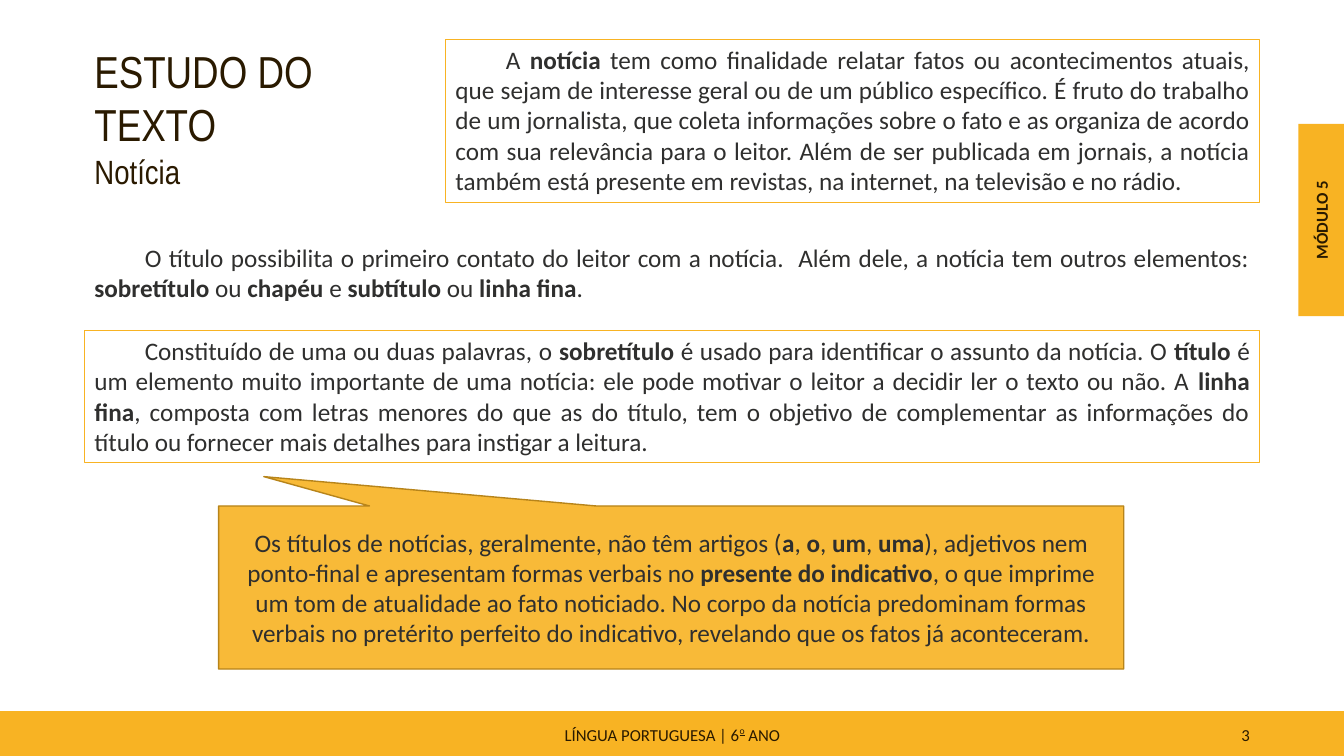
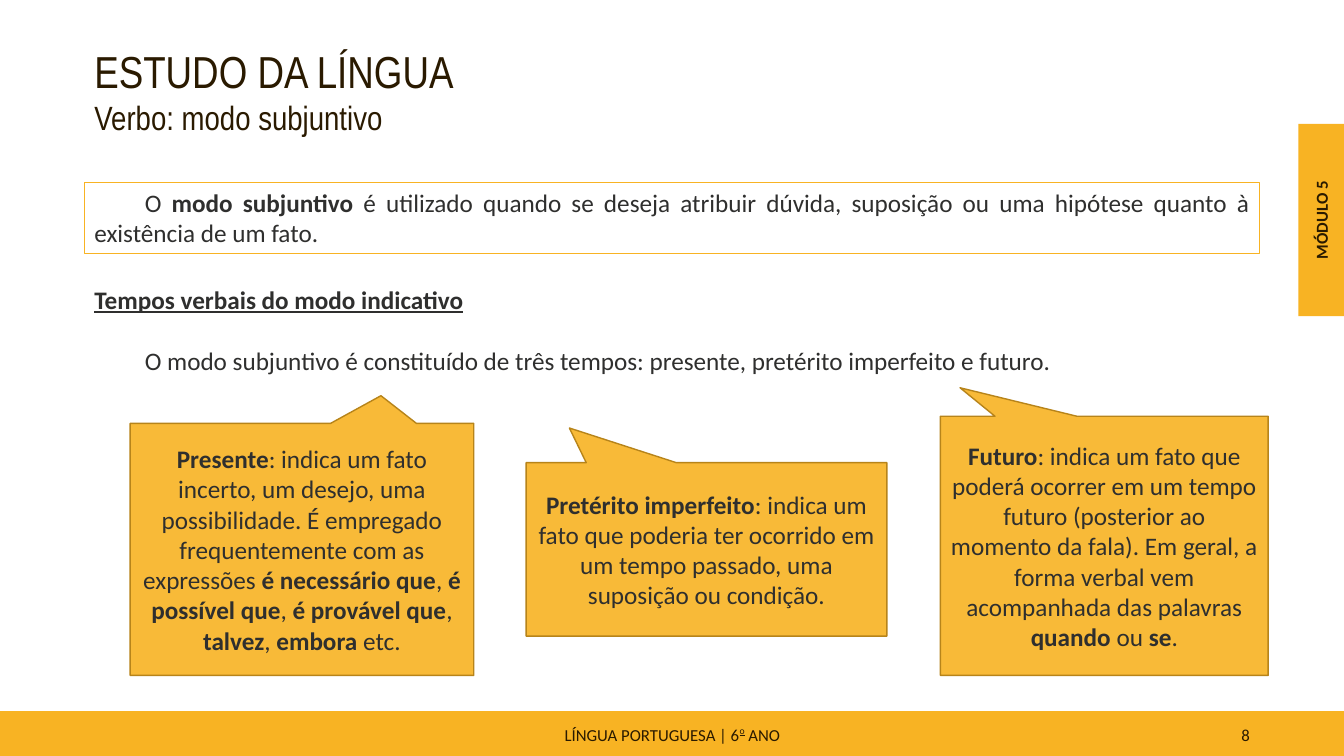
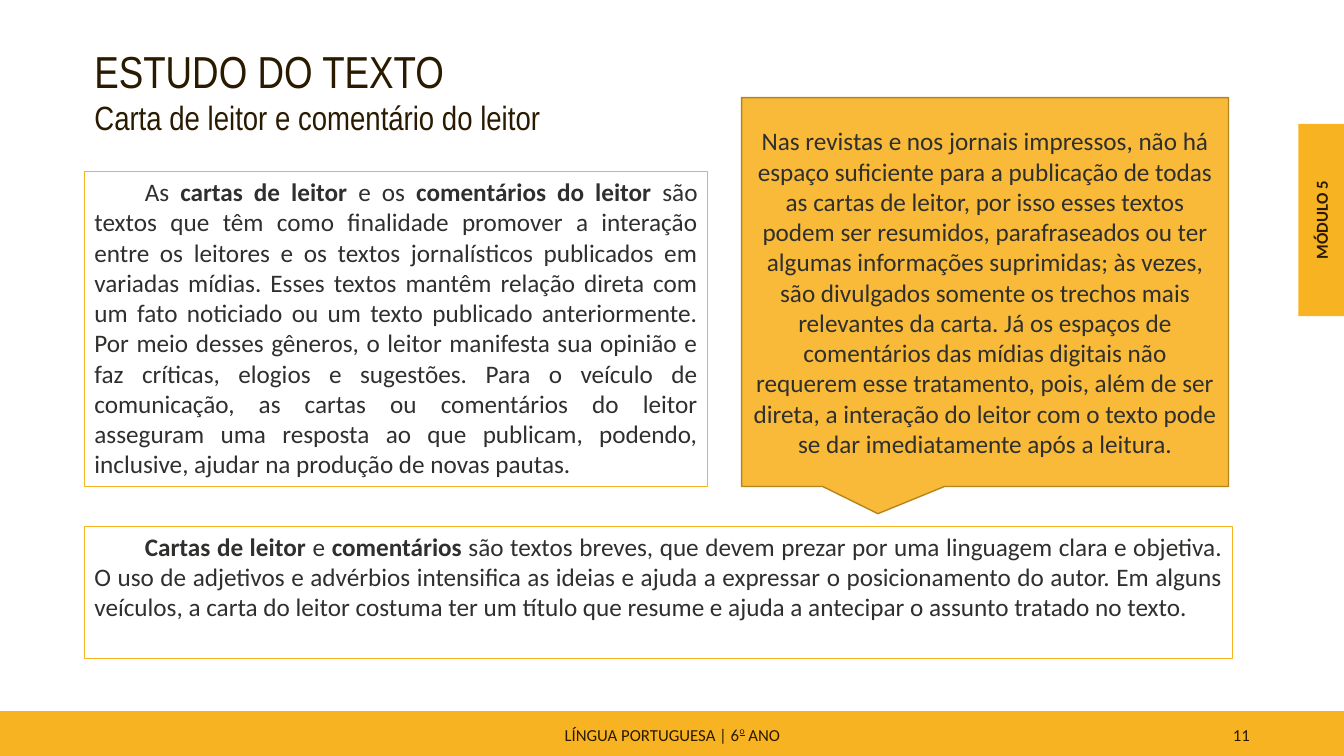
from dataclasses import dataclass
from typing import Any

import lxml.etree
import pptx
import pptx.dml.color
import pptx.enum.shapes
import pptx.enum.text
import pptx.oxml.ns
import pptx.util

Cm = pptx.util.Cm
Pt = pptx.util.Pt
ALIGN = pptx.enum.text.PP_ALIGN
ANCHOR = pptx.enum.text.MSO_ANCHOR
SHAPE = pptx.enum.shapes.MSO_SHAPE

PAGE_WIDTH, PAGE_HEIGHT = 33.87, 19.05
LEFT, CONTENT_WIDTH = 2.13, 29.62
YELLOW, OCHRE, BROWN, GREY = "F8B323", "B7841A", "2A1A00", "2F2F2E"
FIRST_LINE = 1.27


def colour(value: str) -> pptx.dml.color.RGBColor:
    return pptx.dml.color.RGBColor.from_string(value)


def text_format(size: int, value: str, name: str = "Calibri", **more: Any) -> dict[str, Any]:
    return {"name": name, "size": Pt(size), "colour": value, **more}


TITLE = text_format(32, BROWN, "Arial Narrow")
SUBTITLE = text_format(24, BROWN, "Arial Narrow")
BODY = text_format(18, GREY)
HEADING = text_format(18, GREY, bold=True, underline=True)
FOOTER = text_format(12, BROWN)
ORDINAL = text_format(12, BROWN, underline=True)
MODULE = text_format(12, BROWN, bold=True)


@dataclass(frozen=True)
class Frame:
    """Place and size in centimetres."""
    left: float
    top: float
    width: float
    height: float

    def lengths(self) -> list[pptx.util.Length]:
        return [Cm(side) for side in (self.left, self.top, self.width, self.height)]


@dataclass(frozen=True)
class TextBlock:
    """Justified text; ** switches bold on and off."""
    frame: Frame
    text: str
    outlined: bool = True
    heading: str = ""


@dataclass(frozen=True)
class Callout:
    """Balloon whose tip is given as a share of its size from its centre."""
    frame: Frame
    tip: tuple[float, float]
    text: str


@dataclass(frozen=True)
class Lesson:
    number: int
    title: str
    subtitle: str
    title_width: float
    blocks: tuple[TextBlock, ...]
    callouts: tuple[Callout, ...]


BAR = Frame(0, 17.92, PAGE_WIDTH, 1.13)
TAB = Frame(32.72, 3.12, 1.15, 4.85)
TAB_TEXT_HEIGHT = 0.76
TAB_TEXT = Frame(
    TAB.left + (TAB.width - TAB.height) / 2,
    TAB.top + (TAB.height - TAB_TEXT_HEIGHT) / 2,
    TAB.height,
    TAB_TEXT_HEIGHT,
)
FOOTER_TEXT = Frame(11.23, 18.03, 11.43, 0.97)
PAGE_NUMBER = Frame(23.93, 18.03, 7.82, 0.97)

LESSONS = (
    Lesson(
        3, "ESTUDO DO TEXTO", "Notícia", 9.09,
        (
            TextBlock(
                Frame(11.23, 0.99, 20.52, 4.11),
                "A **notícia** tem como finalidade relatar fatos ou acontecimentos atuais, "
                "que sejam de interesse geral ou de um público específico. É fruto do "
                "trabalho de um jornalista, que coleta informações sobre o fato e as "
                "organiza de acordo com sua relevância para o leitor. Além de ser publicada "
                "em jornais, a notícia também está presente em revistas, na internet, na "
                "televisão e no rádio.",
            ),
            TextBlock(
                Frame(LEFT, 5.97, CONTENT_WIDTH, 1.8),
                "O título possibilita o primeiro contato do leitor com a notícia.  Além "
                "dele, a notícia tem outros elementos: **sobretítulo** ou **chapéu** e "
                "**subtítulo** ou **linha fina**.",
                outlined=False,
            ),
            TextBlock(
                Frame(LEFT, 8.33, CONTENT_WIDTH, 3.33),
                "Constituído de uma ou duas palavras, o **sobretítulo** é usado para "
                "identificar o assunto da notícia. O **título** é um elemento muito "
                "importante de uma notícia: ele pode motivar o leitor a decidir ler o texto "
                "ou não. A **linha fina**, composta com letras menores do que as do título, "
                "tem o objetivo de complementar as informações do título ou fornecer mais "
                "detalhes para instigar a leitura.",
            ),
        ),
        (
            Callout(
                Frame(5.51, 12.75, 22.81, 4.11), (-0.45, -0.68),
                "Os títulos de notícias, geralmente, não têm artigos (**a**, **o**, **um**, "
                "**uma**), adjetivos nem ponto-final e apresentam formas verbais no "
                "**presente do indicativo**, o que imprime um tom de atualidade ao fato "
                "noticiado. No corpo da notícia predominam formas verbais no pretérito "
                "perfeito do indicativo, revelando que os fatos já aconteceram.",
            ),
        ),
    ),
    Lesson(
        8, "ESTUDO DA LÍNGUA", "Verbo: modo subjuntivo", 10.13,
        (
            TextBlock(
                Frame(LEFT, 4.6, CONTENT_WIDTH, 1.8),
                "O **modo subjuntivo **é utilizado quando se deseja atribuir dúvida, "
                "suposição ou uma hipótese quanto à existência de um fato.",
            ),
            TextBlock(
                Frame(LEFT, 7.04, CONTENT_WIDTH, 2.57),
                "O modo subjuntivo é constituído de três tempos: presente, pretérito "
                "imperfeito e futuro.",
                outlined=False,
                heading="Tempos verbais do modo indicativo",
            ),
        ),
        (
            Callout(
                Frame(3.28, 10.67, 8.66, 6.35), (0.23, -0.61),
                "**Presente**: indica um fato incerto, um desejo, uma possibilidade. É "
                "empregado frequentemente com as expressões **é necessário que**, **é "
                "possível que**, **é provável que**, **talvez**, **embora** etc.",
            ),
            Callout(
                Frame(13.26, 11.66, 9.09, 4.37), (-0.38, -0.7),
                "**Pretérito imperfeito**: indica um fato que poderia ter ocorrido em um "
                "tempo passado, uma suposição ou condição.",
            ),
            Callout(
                Frame(23.7, 10.49, 8.26, 6.53), (-0.44, -0.61),
                "**Futuro**: indica um fato que poderá ocorrer em um tempo futuro "
                "(posterior ao momento da fala). Em geral, a forma verbal vem acompanhada "
                "das palavras **quando** ou **se**.",
            ),
        ),
    ),
    Lesson(
        11, "ESTUDO DO TEXTO", "Carta de leitor e comentário do leitor", 14.43,
        (
            TextBlock(
                Frame(LEFT, 4.32, 15.7, 7.95),
                "As **cartas de leitor **e os **comentários do leitor **são textos que têm "
                "como finalidade promover a interação entre os leitores e os textos "
                "jornalísticos publicados em variadas mídias. Esses textos mantêm relação "
                "direta com um fato noticiado ou um texto publicado anteriormente. Por meio "
                "desses gêneros, o leitor manifesta sua opinião e faz críticas, elogios e "
                "sugestões. Para o veículo de comunicação, as cartas ou comentários do "
                "leitor asseguram uma resposta ao que publicam, podendo, inclusive, ajudar "
                "na produção de novas pautas.",
            ),
            TextBlock(
                Frame(LEFT, 13.26, 28.93, 3.33),
                "**Cartas de leitor **e **comentários** são textos breves, que devem prezar "
                "por uma linguagem clara e objetiva. O uso de adjetivos e advérbios "
                "intensifica as ideias e ajuda a expressar o posicionamento do autor. Em "
                "alguns veículos, a carta do leitor costuma ter um título que resume e ajuda "
                "a antecipar o assunto tratado no texto.",
            ),
        ),
        (
            Callout(
                Frame(18.69, 2.46, 12.27, 9.8), (-0.22, 0.57),
                "Nas revistas e nos jornais impressos, não há espaço suficiente para a "
                "publicação de todas as cartas de leitor, por isso esses textos podem ser "
                "resumidos, parafraseados ou ter algumas informações suprimidas; às vezes, "
                "são divulgados somente os trechos mais relevantes da carta. Já os espaços "
                "de comentários das mídias digitais não requerem esse tratamento, pois, além "
                "de ser direta, a interação do leitor com o texto pode se dar imediatamente "
                "após a leitura.",
            ),
        ),
    ),
)


def add_span(para: Any, text: str, style: dict[str, Any]) -> Any:
    span = para.add_run()
    span.text = text
    for name, value in style.items():
        if name == "colour":
            span.font.color.rgb = colour(value)
        else:
            setattr(span.font, name, value)
    return span


def add_marked_text(para: Any, text: str) -> None:
    """Write body text, bold between pairs of **."""
    for index, part in enumerate(text.split("**")):
        if part:
            add_span(para, part, BODY | {"bold": index % 2 == 1})


def add_box(page: Any, frame: Frame, anchor: Any = ANCHOR.TOP) -> Any:
    box = page.shapes.add_textbox(*frame.lengths())
    box.text_frame.word_wrap = True
    box.text_frame.vertical_anchor = anchor
    return box


def add_panel(page: Any, frame: Frame, kind: Any = SHAPE.RECTANGLE) -> Any:
    """Add a yellow shape without outline or shadow."""
    panel = page.shapes.add_shape(kind, *frame.lengths())
    panel.shadow.inherit = False
    panel.fill.solid()
    panel.fill.fore_color.rgb = colour(YELLOW)
    panel.line.fill.background()
    return panel


def set_outline(shape: Any, value: str, width: float) -> None:
    shape.line.color.rgb = colour(value)
    shape.line.width = Pt(width)


def add_text_block(page: Any, block: TextBlock) -> None:
    box = add_box(page, block.frame)
    if block.outlined:
        set_outline(box, YELLOW, 0.75)
    para = box.text_frame.paragraphs[0]
    if block.heading:
        add_span(para, block.heading, HEADING)
        para = box.text_frame.add_paragraph()
        para.space_before = Pt(22)
    para.alignment = ALIGN.JUSTIFY
    para._p.get_or_add_pPr().set("indent", str(Cm(FIRST_LINE)))
    add_marked_text(para, block.text)


def add_callout(page: Any, callout: Callout) -> None:
    balloon = add_panel(page, callout.frame, SHAPE.RECTANGULAR_CALLOUT)
    for index, share in enumerate(callout.tip):
        balloon.adjustments[index] = share
    name = pptx.oxml.ns.qn
    fill_colour = balloon._element.spPr.find(name("a:solidFill"))[0]
    lxml.etree.SubElement(fill_colour, name("a:alpha")).set("val", "90000")
    set_outline(balloon, OCHRE, 1)
    balloon.text_frame.word_wrap = True
    balloon.text_frame.vertical_anchor = ANCHOR.MIDDLE
    para = balloon.text_frame.paragraphs[0]
    para.alignment = ALIGN.CENTER
    add_marked_text(para, callout.text)


def add_footer_para(page: Any, frame: Frame, alignment: Any) -> Any:
    para = add_box(page, frame, ANCHOR.MIDDLE).text_frame.paragraphs[0]
    para.alignment = alignment
    para.space_after = Pt(6)
    return para


def add_bands(page: Any, number: int) -> None:
    """Draw the footer bar and the module tab with their texts."""
    add_panel(page, BAR)
    para = add_footer_para(page, FOOTER_TEXT, ALIGN.CENTER)
    add_span(para, "LÍNGUA PORTUGUESA | 6", FOOTER)
    ordinal = add_span(para, "o", ORDINAL)
    ordinal.font._element.set("baseline", "45000")
    add_span(para, " ANO", FOOTER)
    add_span(add_footer_para(page, PAGE_NUMBER, ALIGN.RIGHT), str(number), FOOTER)

    add_panel(page, TAB)
    label = add_box(page, TAB_TEXT)
    label.rotation = 270
    label_para = label.text_frame.paragraphs[0]
    label_para.alignment = ALIGN.CENTER
    add_span(label_para, "MÓDULO 5", MODULE)


def add_title(page: Any, lesson: Lesson) -> None:
    text = add_box(page, Frame(LEFT, 0.97, lesson.title_width, 2.64)).text_frame
    add_span(text.paragraphs[0], lesson.title, TITLE)
    add_span(text.add_paragraph(), lesson.subtitle, SUBTITLE)


def main() -> None:
    deck = pptx.Presentation()
    deck.slide_width, deck.slide_height = Cm(PAGE_WIDTH), Cm(PAGE_HEIGHT)
    for lesson in LESSONS:
        page = deck.slides.add_slide(deck.slide_layouts[6])
        add_bands(page, lesson.number)
        add_title(page, lesson)
        for block in lesson.blocks:
            add_text_block(page, block)
        for callout in lesson.callouts:
            add_callout(page, callout)
    deck.save("out.pptx")


if __name__ == "__main__":
    main()
